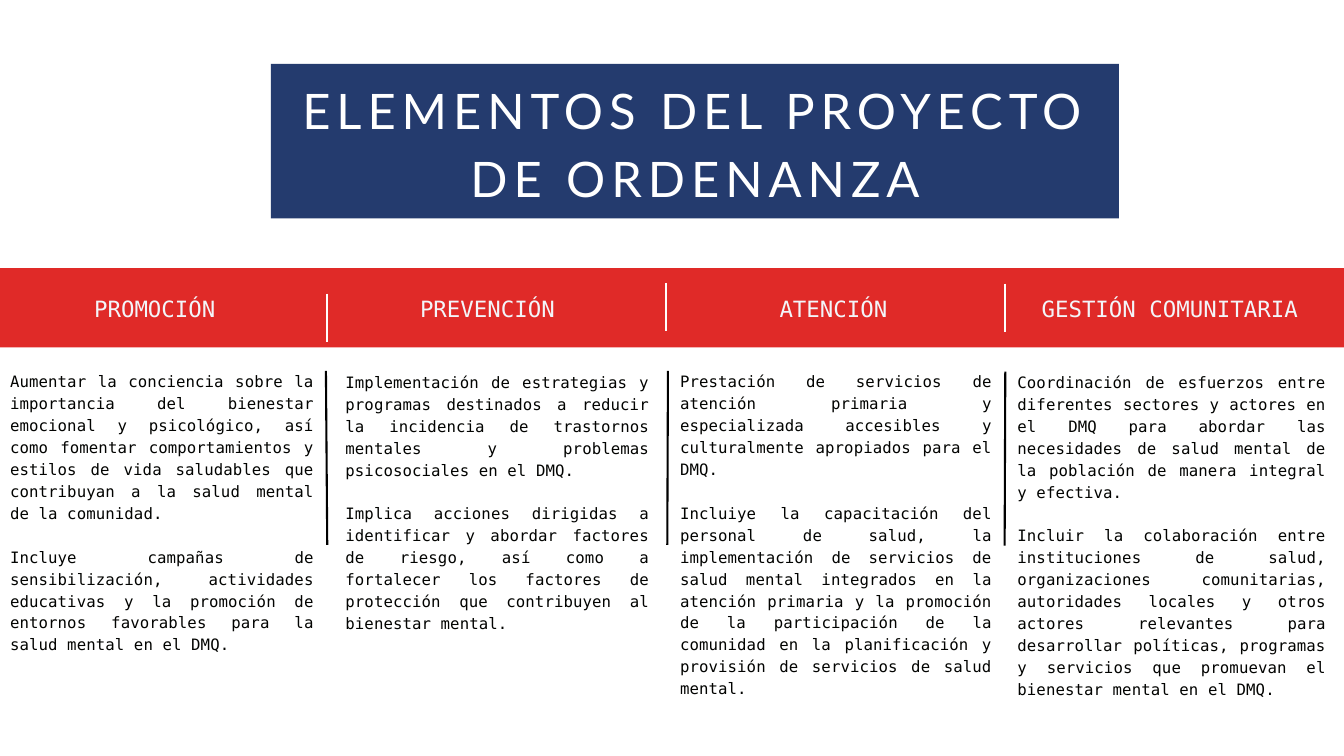
from pptx import Presentation
from pptx.dml.color import RGBColor
from pptx.enum.shapes import MSO_CONNECTOR, MSO_SHAPE
from pptx.enum.text import PP_ALIGN
from pptx.oxml.ns import qn
from pptx.util import Inches, Pt
from lxml import etree

RECT, STRAIGHT = MSO_SHAPE.RECTANGLE, MSO_CONNECTOR.STRAIGHT
LEFT, CENTER, JUSTIFY = PP_ALIGN.LEFT, PP_ALIGN.CENTER, PP_ALIGN.JUSTIFY
RED = RGBColor(0xE0, 0x2A, 0x28)
NAVY = RGBColor(0x24, 0x3B, 0x6E)
WHITE = RGBColor(0xFF, 0xFF, 0xFF)
BLACK = RGBColor(0, 0, 0)
PALE = RGBColor(0xF3, 0xF5, 0xF9)
INK = RGBColor(0x02, 0x03, 0x01)

# Font, size, colour, letter spacing, line spacing and alignment of each text
TITLE = dict(name="Lato", size=52.4, color=WHITE, spc=640, line=73.4, align=CENTER)
HEADING = dict(name="DejaVu Sans Mono", size=24, color=PALE, spc=0, line=33.6, align=LEFT)
BODY = dict(name="DejaVu Sans Mono", size=16.8, color=INK, spc=10, line=23.5, align=JUSTIFY)

prs = Presentation()
prs.slide_width, prs.slide_height = Inches(20), Inches(11.25)
s = prs.slides.add_slide(prs.slide_layouts[6])


def add_text(box, paragraphs, style):
    tf = s.shapes.add_textbox(*map(Inches, box)).text_frame
    tf.word_wrap = True
    for side in ("left", "top", "right", "bottom"):
        setattr(tf, f"margin_{side}", 0)
    for i, text in enumerate(paragraphs):
        p = tf.paragraphs[0] if i == 0 else tf.add_paragraph()
        p.alignment = style["align"]
        p.line_spacing = Pt(style["line"])
        p.space_before = Pt(style["line"] if i else 0)  # one empty line between paragraphs
        r = p.add_run()
        r.text = text
        r.font.name = style["name"]
        r.font.size = Pt(style["size"])
        r.font.color.rgb = style["color"]
        r.font._element.set("spc", str(style["spc"]))


def add_line(x1, y1, x2, y2, color):
    line = s.shapes.add_connector(STRAIGHT, *map(Inches, (x1, y1, x2, y2)))
    line.line.color.rgb = color
    line.line.width = Pt(2.25)
    etree.SubElement(line._element.spPr, qn("a:effectLst"))


# Heading band and title panel
for box, color in (((0, 3.99, 20, 1.18), RED), ((4.03, 0.95, 12.62, 2.3), NAVY)):
    sp = s.shapes.add_shape(RECT, *map(Inches, box))
    sp.shadow.inherit = False
    sp.fill.solid()
    sp.fill.fore_color.rgb = color
    sp.line.fill.background()

add_text((4.34, 1.05, 12.01, 1.99), ["ELEMENTOS DEL PROYECTO DE ORDENANZA"], TITLE)

# Columns: heading, its left and width, then body left, top, width, height and paragraphs
columns = [
    ("PROMOCIÓN", 1.4, 1.96, (0.15, 5.49, 4.52, 4.18), [
        "Aumentar la conciencia sobre la importancia del bienestar emocional y "
        "psicológico, así como fomentar comportamientos y estilos de vida saludables "
        "que contribuyan a la salud mental de la comunidad.",
        "Incluye campañas de sensibilización, actividades educativas y la promoción "
        "de entornos favorables para la salud mental en el DMQ."]),
    ("PREVENCIÓN", 6.25, 2.11, (5.14, 5.5, 4.52, 3.54), [
        "Implementación de estrategias y programas destinados a reducir la incidencia "
        "de trastornos mentales y problemas psicosociales en el DMQ.",
        "Implica acciones dirigidas a identificar y abordar factores de riesgo, así "
        "como a fortalecer los factores de protección que contribuyen al bienestar "
        "mental."]),
    ("ATENCIÓN", 11.6, 1.79, (10.12, 5.49, 4.64, 4.83), [
        "Prestación de servicios de atención primaria y especializada accesibles y "
        "culturalmente apropiados para el DMQ.",
        "Incluiye la capacitación del personal de salud, la implementación de "
        "servicios de salud mental integrados en la atención primaria y la promoción "
        "de la participación de la comunidad en la planificación y provisión de "
        "servicios de salud mental."]),
    ("GESTIÓN COMUNITARIA", 15.5, 3.97, (15.14, 5.5, 4.59, 4.83), [
        "Coordinación de esfuerzos entre diferentes sectores y actores en el DMQ para "
        "abordar las necesidades de salud mental de la población de manera integral y "
        "efectiva.",
        "Incluir la colaboración entre instituciones de salud, organizaciones "
        "comunitarias, autoridades locales y otros actores relevantes para desarrollar "
        "políticas, programas y servicios que promuevan el bienestar mental en el "
        "DMQ."]),
]
for heading, left, width, body_box, paragraphs in columns:
    add_text((left, 4.33, width, 0.43), [heading], HEADING)
    add_text(body_box, paragraphs, BODY)

# Dividers: white in the band, black and slightly slanted between the bodies
for x, band_top, x_top, x_bottom, body_top in (
        (4.87, 4.37, 4.85, 4.87, 5.52),
        (9.91, 4.21, 9.94, 9.93, 5.52),
        (14.95, 4.22, 14.96, 14.95, 5.53)):
    add_line(x, band_top, x, band_top + 0.72, WHITE)
    add_line(x_top, body_top, x_bottom, body_top + 2.59, BLACK)

prs.save("out.pptx")
